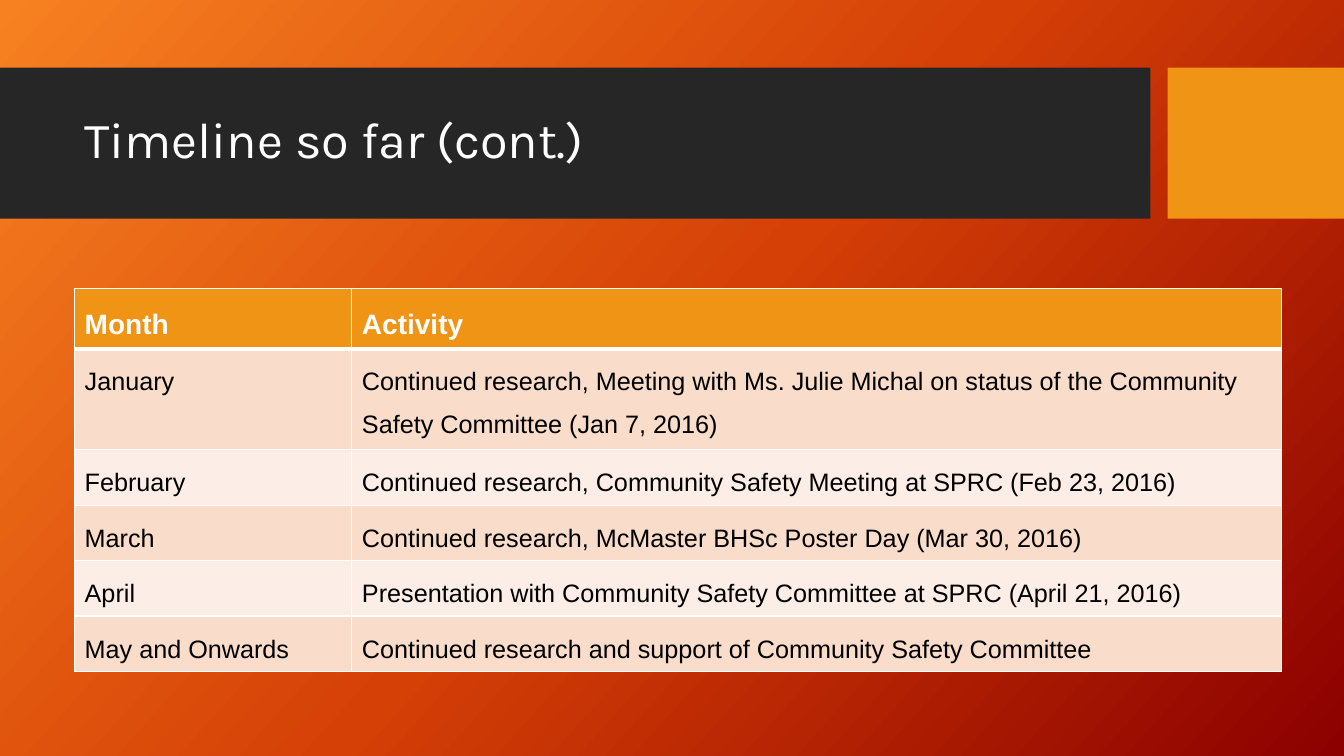
import copy

import pptx
import pptx.dml.color
import pptx.enum.shapes
import pptx.enum.text
import pptx.oxml
import pptx.oxml.ns
import pptx.util
from pptx.util import Inches

COLORS = {
    "band": "262626", "accent": "F09415", "white": "FFFFFF", "black": "000000",
    "row_dark": "F9DCCA", "row_light": "FCEEE7",
    "glow": "F78121", "ember": "D54006", "deep_red": "8C0000",
}
BACKGROUND = [(0, "glow"), (0.5, "ember"), (1, "deep_red")]
TIMELINE = [
    ("Month", "Activity"),
    ("January", "Continued research, Meeting with Ms. Julie Michal on status of the "
                "Community Safety Committee (Jan 7, 2016)"),
    ("February", "Continued research, Community Safety Meeting at SPRC (Feb 23, 2016)"),
    ("March", "Continued research, McMaster BHSc Poster Day (Mar 30, 2016)"),
    ("April", "Presentation with Community Safety Committee at SPRC (April 21, 2016)"),
    ("May and Onwards", "Continued research and support of Community Safety Committee"),
]


def rgb(name):
    return pptx.dml.color.RGBColor.from_string(COLORS[name])


class SlideBuilder:
    """Holds the text styles and the current slide."""

    title_font, body_font = "Karla", "Arial"
    title_size, header_size, body_size = 36, 20, 18

    def __init__(self, page):
        self.page = page

    def background(self, stops, angle):
        fill = self.page.background.fill
        fill.gradient()
        fill.gradient_angle = 360 - angle
        stop_list = fill.gradient_stops[0]._gs.getparent()
        stop_list.insert(1, copy.deepcopy(stop_list[0]))
        for stop, (position, color) in zip(fill.gradient_stops, stops):
            stop.position = position
            stop.color.rgb = rgb(color)

    def block(self, left, top, width, height, color):
        box = self.page.shapes.add_shape(
            pptx.enum.shapes.MSO_SHAPE.RECTANGLE,
            Inches(left), Inches(top), Inches(width), Inches(height))
        box.shadow.inherit = False
        box.fill.solid()
        box.fill.fore_color.rgb = rgb(color)
        box.line.fill.background()

    def set_text(self, frame, text, font, size, color, spacing, bold=False):
        para = frame.paragraphs[0]
        para.text = text
        para.line_spacing = spacing
        para.font.name = font
        para.font.size = pptx.util.Pt(size)
        para.font.bold = bold
        para.font.color.rgb = rgb(color)

    def title(self, left, top, width, height, text):
        box = self.page.shapes.add_textbox(
            Inches(left), Inches(top), Inches(width), Inches(height))
        frame = box.text_frame
        frame.word_wrap = True
        frame.vertical_anchor = pptx.enum.text.MSO_ANCHOR.MIDDLE
        self.set_text(frame, text, self.title_font, self.title_size, "white", 0.9)

    def borders(self, cell, widths):
        properties = cell._tc.get_or_add_tcPr()
        for index, (side, width) in enumerate(widths.items()):
            properties.insert(index, pptx.oxml.parse_xml(
                f'<a:{side} {pptx.oxml.ns.nsdecls("a")} w="{int(pptx.util.Pt(width))}">'
                f'<a:solidFill><a:srgbClr val="{COLORS["white"]}"/></a:solidFill>'
                f'</a:{side}>'))

    def table(self, left, top, column_widths, row_height, rows):
        table = self.page.shapes.add_table(
            len(rows), len(column_widths), Inches(left), Inches(top),
            Inches(sum(column_widths)), Inches(row_height * len(rows))).table
        for column, width in zip(table.columns, column_widths):
            column.width = Inches(width)
        for r, texts in enumerate(rows):
            table.rows[r].height = Inches(row_height)
            header = r == 0
            fill = "accent" if header else "row_dark" if r % 2 else "row_light"
            for c, text in enumerate(texts):
                cell = table.cell(r, c)
                cell.fill.solid()
                cell.fill.fore_color.rgb = rgb(fill)
                self.set_text(cell.text_frame, text, self.body_font,
                              self.header_size if header else self.body_size,
                              "white" if header else "black", 1.5, header)
                self.borders(cell, {"lnL": 1, "lnR": 1, "lnT": 3 if r == 1 else 1,
                                    "lnB": 3 if header else 1})


def main():
    deck = pptx.Presentation()
    deck.slide_width, deck.slide_height = Inches(13.33), Inches(7.5)
    builder = SlideBuilder(deck.slides.add_slide(deck.slide_layouts[6]))

    # Backdrop and title band
    builder.background(BACKGROUND, 42)
    builder.block(0, 0.67, 11.41, 1.5, "band")
    builder.block(11.58, 0.67, 1.75, 1.5, "accent")
    builder.title(0.74, 0.82, 10.51, 1.18, "Timeline so far (cont.)")

    # Monthly activities
    builder.table(0.74, 2.86, [2.75, 9.22], 0.41, TIMELINE)

    deck.save("out.pptx")


if __name__ == "__main__":
    main()
